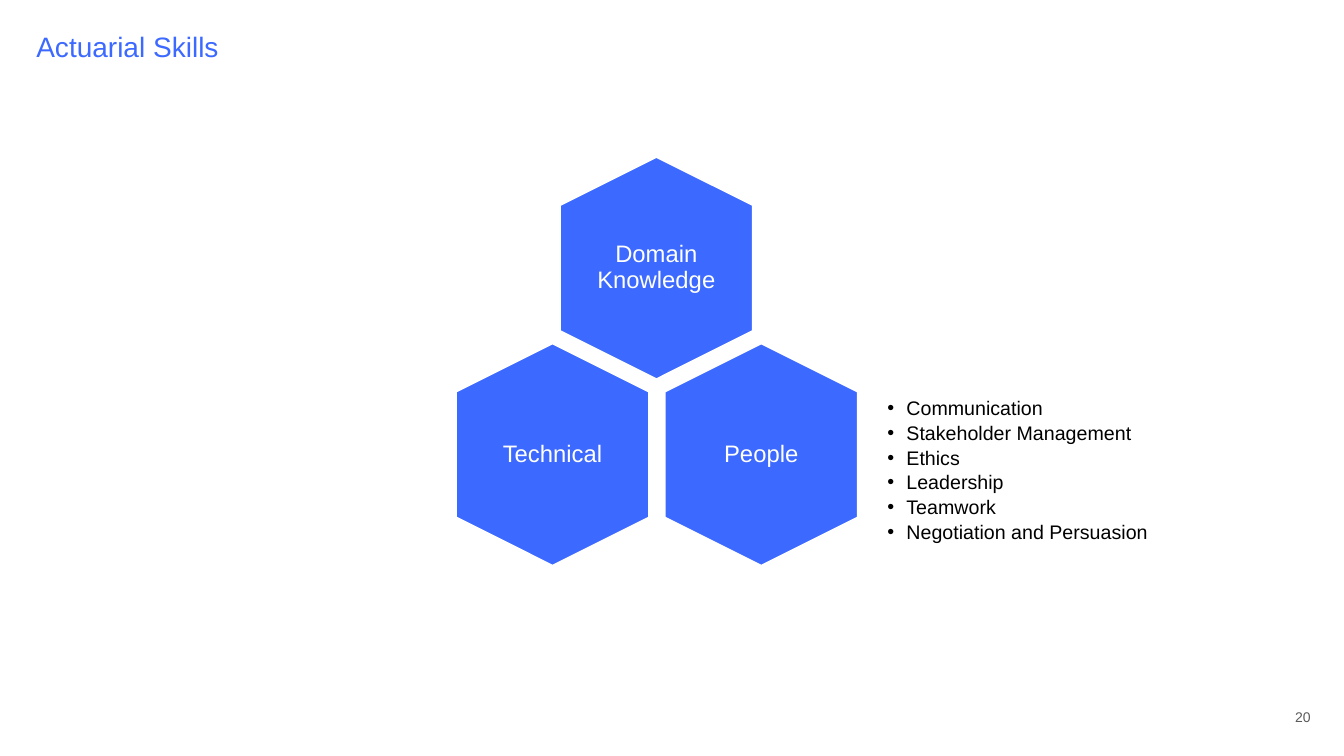
from pptx import Presentation
from pptx.dml.color import RGBColor
from pptx.enum import shapes, text
from pptx.oxml.ns import qn
from pptx.util import Inches, Pt
from lxml import etree

BLUE, WHITE, BLACK, GREY = "3C69FF", "FFFFFF", "000000", "5B5B5B"
HEX_W, HEX_H = 2.2, 1.91
LABEL_W, LABEL_H = 1.32, 1.51
SKILLS = [
    ("People", 7.55, 4.51),
    ("Technical", 5.48, 4.51),
    ("Domain Knowledge", 6.51, 2.66),
]
PEOPLE_SKILLS = [
    "Communication",
    "Stakeholder Management",
    "Ethics",
    "Leadership",
    "Teamwork",
    "Negotiation and Persuasion",
]


def rgb(value):
    return RGBColor.from_string(value)


def add_bullet(p, indent=0.19):
    pPr = p._p.get_or_add_pPr()
    pPr.set("marL", str(Inches(indent)))
    pPr.set("indent", str(-Inches(indent)))
    etree.SubElement(pPr, qn("a:buFont")).set("typeface", "Arial")
    etree.SubElement(pPr, qn("a:buChar")).set("char", "•")


def add_text(s, lines, x, y, w, h, size, color, align=text.PP_ALIGN.LEFT,
             anchor=text.MSO_ANCHOR.TOP, inset=0, spacing=1.0, bullets=False):
    """Add a wrapped text box with one paragraph for each line."""
    sp = s.shapes.add_textbox(Inches(x), Inches(y), Inches(w), Inches(h))
    tf = sp.text_frame
    tf.word_wrap = True
    tf.vertical_anchor = anchor
    tf.margin_left = tf.margin_right = Inches(inset)
    tf.margin_top = tf.margin_bottom = Inches(inset)
    for i, line in enumerate(lines):
        p = tf.add_paragraph() if i else tf.paragraphs[0]
        p.alignment = align
        p.line_spacing = spacing
        if bullets:
            add_bullet(p)
        r = p.add_run()
        r.text = line
        r.font.name = "Arial"
        r.font.size = Pt(size)
        r.font.color.rgb = rgb(color)


def add_skill(s, label, cx, cy):
    """Add an upright hexagon centred on (cx, cy) with its label."""
    sp = s.shapes.add_shape(
        shapes.MSO_SHAPE.HEXAGON, Inches(cx - HEX_W / 2),
        Inches(cy - HEX_H / 2), Inches(HEX_W), Inches(HEX_H))
    sp.rotation = 90
    sp.adjustments[0] = 0.25
    sp.shadow.inherit = False
    sp.fill.solid()
    sp.fill.fore_color.rgb = rgb(BLUE)
    sp.line.color.rgb = rgb(WHITE)
    sp.line.width = Pt(1)
    add_text(s, [label], cx - LABEL_W / 2, cy - LABEL_H / 2, LABEL_W, LABEL_H,
             17, WHITE, align=text.PP_ALIGN.CENTER,
             anchor=text.MSO_ANCHOR.MIDDLE, inset=0.07, spacing=0.9)


def main():
    prs = Presentation()
    prs.slide_width, prs.slide_height = Inches(13.33), Inches(7.5)
    s = prs.slides.add_slide(prs.slide_layouts[6])
    add_text(s, ["Actuarial Skills"], 0.36, 0.33, 5.91, 1.35, 20, BLUE,
             spacing=0.9)
    for label, cx, cy in SKILLS:
        add_skill(s, label, cx, cy)
    add_text(s, PEOPLE_SKILLS, 8.8, 3.92, 3.42, 1.19, 14, BLACK,
             spacing=1.05, bullets=True)
    add_text(s, ["20"], 12.54, 7, 0.46, 0.2, 10, GREY,
             align=text.PP_ALIGN.RIGHT, anchor=text.MSO_ANCHOR.BOTTOM)
    prs.save("out.pptx")


if __name__ == "__main__":
    main()
